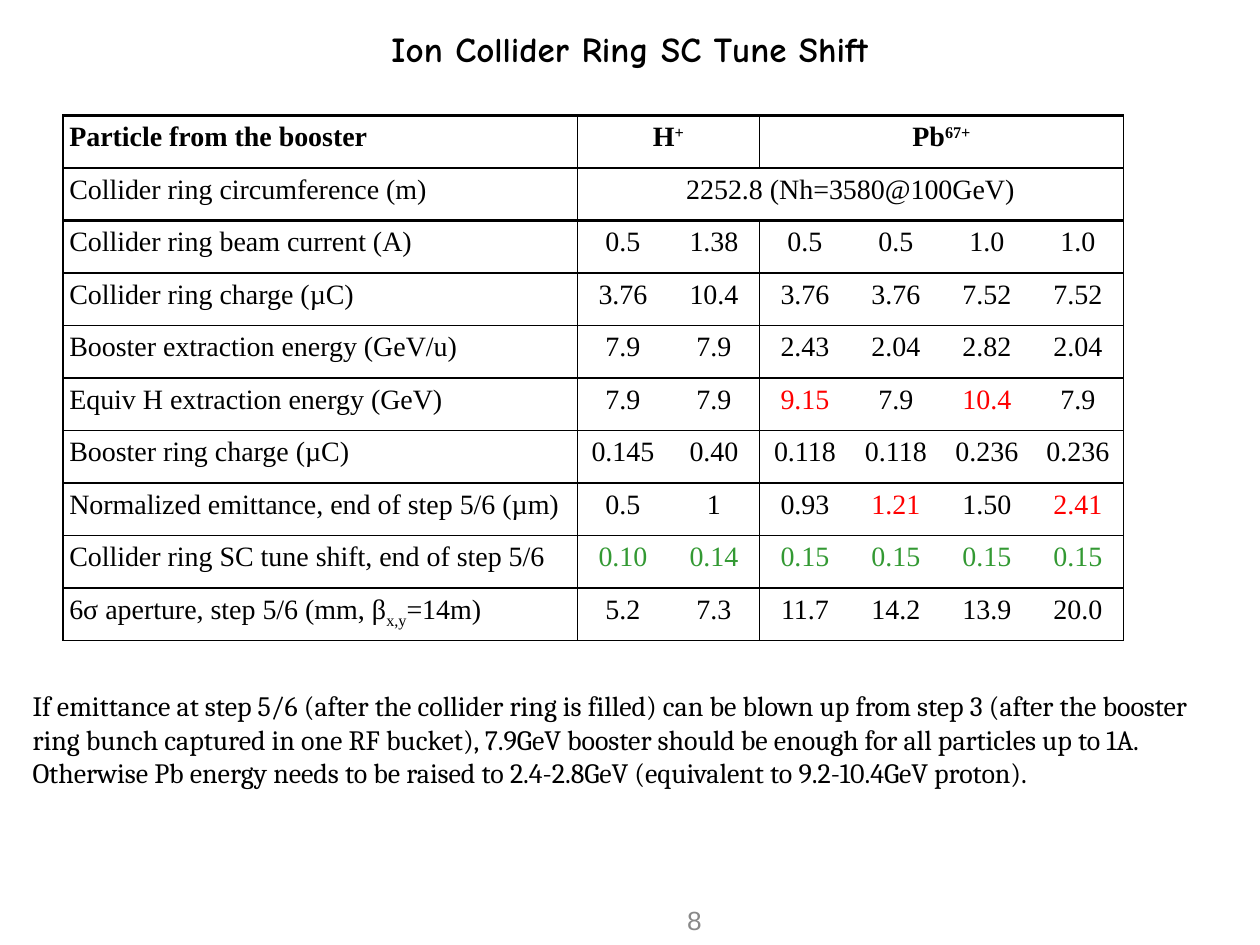
from dataclasses import dataclass
from typing import NamedTuple

import pptx
import pptx.dml.color
import pptx.enum.text
import pptx.oxml.ns
import pptx.util
from lxml import etree

Pt = pptx.util.Pt
RGBColor = pptx.dml.color.RGBColor
PP_ALIGN = pptx.enum.text.PP_ALIGN
MSO_ANCHOR = pptx.enum.text.MSO_ANCHOR

BLACK = RGBColor(0x00, 0x00, 0x00)
RED = RGBColor(0xFF, 0x00, 0x00)
GREEN = RGBColor(0x33, 0x99, 0x33)
GREY = RGBColor(0x89, 0x89, 0x89)

COL_WIDTHS = [294] + [52] * 6
ROW_HEIGHT = 30
RULED_COLUMNS = {0, 2, 6}  # columns closed by a vertical line
HEAVY_LINES = 3  # the first horizontal lines are thicker
THIN, HEAVY = 1, 1.5


class Run(NamedTuple):
    text: str
    baseline: int = 0  # percent; positive is superscript


@dataclass
class Cell:
    runs: list[Run]
    span: int = 1
    color: RGBColor = BLACK
    bold: bool = False


@dataclass
class Box:
    left: float
    top: float
    width: float
    height: float


def label(text: str) -> Cell:
    return Cell([Run(text)])


def row(name: Cell, values: str, color: RGBColor = BLACK, marked: tuple = ()) -> list[Cell]:
    """A label and its values; the marked values are red."""
    return [name] + [Cell([Run(v)], color=RED if i in marked else color)
                     for i, v in enumerate(values.split())]


ROWS = [
    [Cell([Run("Particle from the booster")], bold=True),
     Cell([Run("H"), Run("+", 30)], span=2, bold=True),
     Cell([Run("Pb"), Run("67+", 30)], span=4, bold=True)],
    [label("Collider ring circumference (m)"),
     Cell([Run("2252.8 (Nh=3580@100GeV)")], span=6)],
    row(label("Collider ring beam current (A)"), "0.5 1.38 0.5 0.5 1.0 1.0"),
    row(label("Collider ring charge (µC)"), "3.76 10.4 3.76 3.76 7.52 7.52"),
    row(label("Booster extraction energy (GeV/u)"), "7.9 7.9 2.43 2.04 2.82 2.04"),
    row(label("Equiv H extraction energy (GeV)"), "7.9 7.9 9.15 7.9 10.4 7.9", marked=(2, 4)),
    row(label("Booster ring charge (µC)"), "0.145 0.40 0.118 0.118 0.236 0.236"),
    row(label("Normalized emittance, end of step 5/6 (µm)"), "0.5 1 0.93 1.21 1.50 2.41",
        marked=(3, 5)),
    row(label("Collider ring SC tune shift, end of step 5/6"), "0.10 0.14 0.15 0.15 0.15 0.15",
        color=GREEN),
    row(Cell([Run("6σ aperture, step 5/6 (mm, β"), Run("x,y", -25), Run("=14m)")]),
        "5.2 7.3 11.7 14.2 13.9 20.0"),
]

NOTE = ("If emittance at step 5/6 (after the collider ring is filled) can be blown up from "
        "step 3 (after the booster ring bunch captured in one RF bucket), 7.9GeV booster should "
        "be enough for all particles up to 1A. Otherwise Pb energy needs to be raised to "
        "2.4-2.8GeV (equivalent to 9.2-10.4GeV proton).")


def format_run(r, font: str, size: float, color: RGBColor, bold: bool = False) -> None:
    r.font.name = font
    r.font.size = Pt(size)
    r.font.color.rgb = color
    r.font.bold = bold


def fill_frame(tf, text: str, font: str, size: float, color: RGBColor, align,
               anchor, bold: bool = False) -> None:
    tf.text = text
    tf.word_wrap = True
    tf.vertical_anchor = anchor
    p = tf.paragraphs[0]
    p.alignment = align
    format_run(p.runs[0], font, size, color, bold)


def add_text(slide, box: Box):
    return slide.shapes.add_textbox(Pt(box.left), Pt(box.top), Pt(box.width), Pt(box.height))


def set_borders(tc, widths: dict[str, float]) -> None:
    """Draw the four sides of a cell; a width of 0 hides the side."""
    tcPr = tc.get_or_add_tcPr()
    qn = pptx.oxml.ns.qn
    for side in "LRTB":
        width = widths[side]
        ln = etree.SubElement(tcPr, qn(f"a:ln{side}"), w=str(int(Pt(width))))
        if width:
            solid = etree.SubElement(ln, qn("a:solidFill"))
            etree.SubElement(solid, qn("a:srgbClr"), val=str(BLACK))
        else:
            etree.SubElement(ln, qn("a:noFill"))


def write_cell(cell, content: Cell, align) -> None:
    tf = cell.text_frame
    p = tf.paragraphs[0]
    p.alignment = align
    p.space_before = p.space_after = Pt(3)
    for run in content.runs:
        r = p.add_run()
        r.text = run.text
        format_run(r, "Times New Roman", 16, content.color, content.bold)
        if run.baseline:
            r.font._element.set("baseline", str(run.baseline * 1000))


def add_ring_table(slide, left: float, top: float) -> None:
    frame = slide.shapes.add_table(len(ROWS), len(COL_WIDTHS), Pt(left), Pt(top),
                                   Pt(sum(COL_WIDTHS)), Pt(ROW_HEIGHT * len(ROWS)))
    table = frame.table
    table.first_row = table.horz_banding = False
    for column, width in zip(table.columns, COL_WIDTHS):
        column.width = Pt(width)
    for i, cells in enumerate(ROWS):
        table.rows[i].height = Pt(ROW_HEIGHT)
        start = 0
        for content in cells:
            end = start + content.span - 1
            if content.span > 1:
                table.cell(i, start).merge(table.cell(i, end))
            for j in range(start, end + 1):
                cell = table.cell(i, j)
                opens = j == start and (j == 0 or j - 1 in RULED_COLUMNS)
                closes = j in (start, end) and end in RULED_COLUMNS
                set_borders(cell._tc, {
                    "L": THIN if opens else 0,
                    "R": THIN if closes else 0,
                    "T": HEAVY if i < HEAVY_LINES else THIN,
                    "B": HEAVY if i + 1 < HEAVY_LINES else THIN,
                })
                cell.fill.background()
                cell.margin_left = cell.margin_right = Pt(3.6)
                cell.margin_top = cell.margin_bottom = Pt(3.6)
            write_cell(table.cell(i, start), content,
                       PP_ALIGN.CENTER if start else PP_ALIGN.LEFT)
            start = end + 1


def main() -> None:
    prs = pptx.Presentation()
    prs.slide_width, prs.slide_height = Pt(720), Pt(540)
    slide = prs.slides.add_slide(prs.slide_layouts[5])

    # Title
    title = slide.shapes.title
    title.left, title.top, title.width, title.height = Pt(36), Pt(11.5), Pt(648), Pt(32)
    fill_frame(title.text_frame, "Ion Collider Ring SC Tune Shift", "Comic Neue", 20, BLACK,
               PP_ALIGN.CENTER, MSO_ANCHOR.MIDDLE, bold=True)
    title.text_frame.auto_size = pptx.enum.text.MSO_AUTO_SIZE.NONE

    # Parameter table
    add_ring_table(slide, 36, 66)

    # Conclusion
    sp = add_text(slide, Box(11.5, 390, 702, 65.5))
    fill_frame(sp.text_frame, NOTE, "Cambria", 16, BLACK, PP_ALIGN.LEFT, MSO_ANCHOR.TOP)

    # Page number
    sp = add_text(slide, Box(354, 511, 54, 29))
    fill_frame(sp.text_frame, "8", "Arial", 15, GREY, PP_ALIGN.RIGHT, MSO_ANCHOR.MIDDLE)

    prs.save("out.pptx")


if __name__ == "__main__":
    main()
